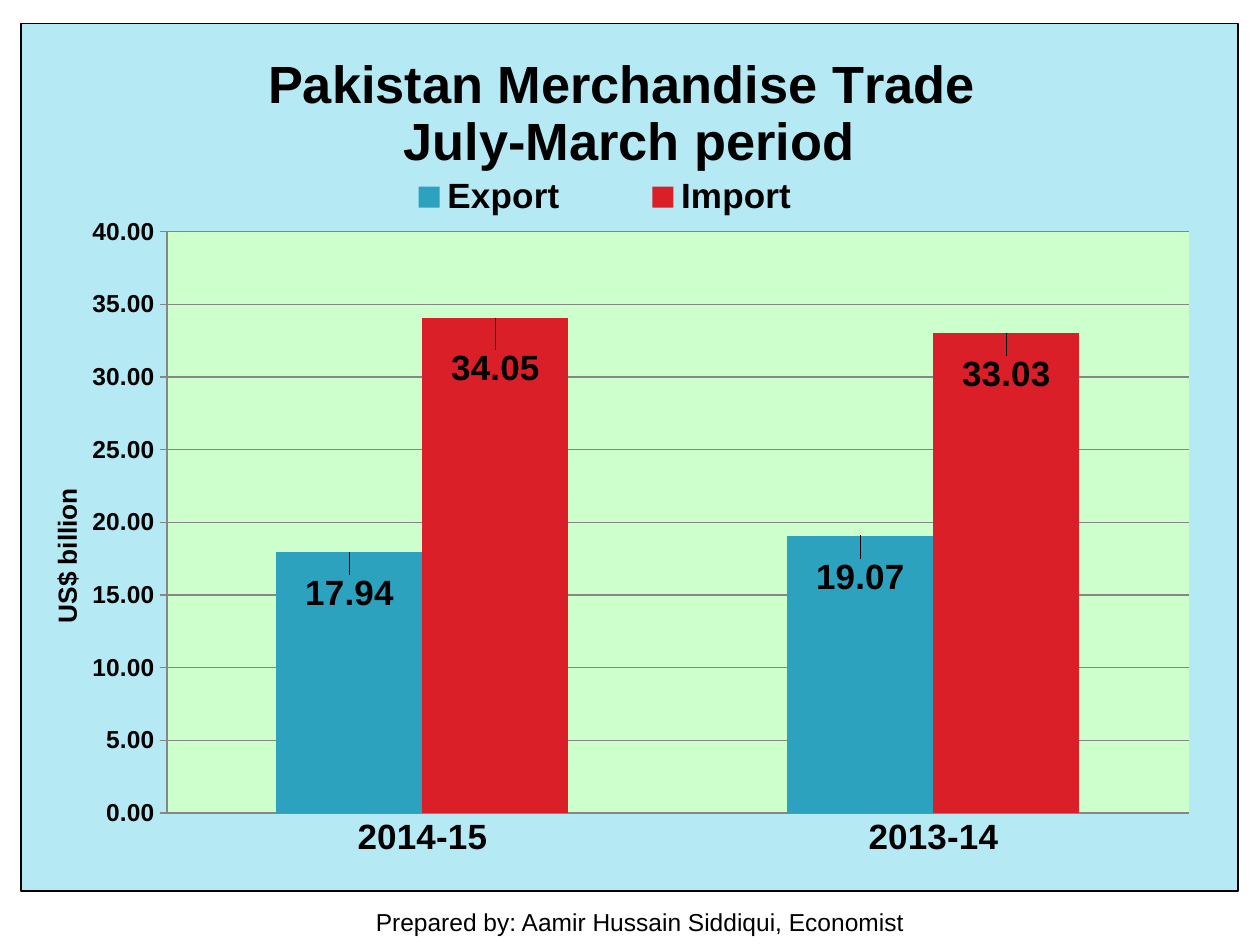
"""Build a slide with a clustered column chart of Pakistan's merchandise trade."""
from lxml import etree
from pptx import Presentation
from pptx.chart.data import CategoryChartData
from pptx.dml.color import RGBColor
from pptx.enum.chart import XL_CHART_TYPE, XL_LABEL_POSITION, XL_LEGEND_POSITION, XL_TICK_MARK
from pptx.enum.text import PP_ALIGN
from pptx.oxml import parse_xml
from pptx.oxml.ns import nsdecls, qn
from pptx.util import Inches, Pt

COLUMNS = XL_CHART_TYPE.COLUMN_CLUSTERED
INSIDE_END = XL_LABEL_POSITION.INSIDE_END
RIGHT = XL_LEGEND_POSITION.RIGHT
NO_TICK, CROSS = XL_TICK_MARK.NONE, XL_TICK_MARK.CROSS
CENTER = PP_ALIGN.CENTER

BLACK = RGBColor(0x00, 0x00, 0x00)
GRAY = RGBColor(0x86, 0x86, 0x86)
SKY = RGBColor(0xB5, 0xE9, 0xF4)
MINT = RGBColor(0xCC, 0xFF, 0xCC)
TEAL = RGBColor(0x2D, 0xA2, 0xBF)
RED = RGBColor(0xDA, 0x1F, 0x28)
FONT = "Arial"

TITLE = "Pakistan Merchandise Trade \nJuly-March period"
AXIS_TITLE = "US$ billion"
CREDIT = "Prepared by: Aamir Hussain Siddiqui, Economist"
YEARS = ["2014-15", "2013-14"]
SERIES = [
    {"name": "Export", "values": (17.94, 19.07), "color": TEAL, "drops": (0.02, 0.02)},
    {"name": "Import", "values": (34.05, 33.03), "color": RED, "drops": (0.03, 0.02)},
]
NO_LEADER_LINES = (
    f'<c:extLst {nsdecls("c")}><c:ext uri="{{CE6537A1-D6FC-4f65-9D91-7224C49458BB}}" '
    'xmlns:c15="http://schemas.microsoft.com/office/drawing/2012/chart">'
    '<c15:showLeaderLines val="0"/></c:ext></c:extLst>'
)


def style_font(font, size, bold=True):
    font.name, font.size, font.bold = FONT, Pt(size), bold
    font.color.rgb = BLACK


def place(element, after=None, target=None, **shares):
    """Give a chart part a manual layout in shares of the chart's size."""
    for old in element.findall(qn("c:layout")):
        element.remove(old)
    layout = etree.Element(qn("c:layout"))
    manual = etree.SubElement(layout, qn("c:manualLayout"))
    if target:
        etree.SubElement(manual, qn("c:layoutTarget")).set("val", target)
    if after != "c:idx":
        for mode in ("xMode", "yMode"):
            etree.SubElement(manual, qn(f"c:{mode}")).set("val", "edge")
    for key, share in shares.items():
        etree.SubElement(manual, qn(f"c:{key}")).set("val", str(share))
    if after:
        element.find(qn(after)).addnext(layout)
    else:
        element.insert(0, layout)


def shape_properties(fill, border=None):
    line = "<a:noFill/>"
    if border:
        line = f'<a:solidFill><a:srgbClr val="{border}"/></a:solidFill>'
    return parse_xml(
        f'<c:spPr {nsdecls("c", "a")}><a:solidFill><a:srgbClr val="{fill}"/>'
        f'</a:solidFill><a:ln w="{Pt(1)}">{line}</a:ln></c:spPr>'
    )


def write_title(owner, text, size, **shares):
    frame = owner.text_frame
    frame.text = text
    for para in frame.paragraphs:
        style_font(para.font, size)
        for span in para.runs:
            style_font(span.font, size)
    place(owner._element, "c:tx", **shares)


def style_axes(chart):
    years, amounts = chart.category_axis, chart.value_axis
    for axis, size, tick in ((years, 20, NO_TICK), (amounts, 14, CROSS)):
        style_font(axis.tick_labels.font, size)
        axis.major_tick_mark, axis.minor_tick_mark = tick, NO_TICK
        axis.format.line.color.rgb = GRAY
    amounts.minimum_scale, amounts.maximum_scale, amounts.major_unit = 0, 40, 5
    amounts.tick_labels.number_format = "#,##0.00"
    amounts.tick_labels.number_format_is_linked = False
    amounts.has_major_gridlines = True
    amounts.major_gridlines.format.line.color.rgb = GRAY
    write_title(amounts.axis_title, AXIS_TITLE, 15, x=0.02, y=0.53)


def hide_leader_lines(labels):
    for old in labels.findall(qn("c:showLeaderLines")):
        labels.remove(old)
    labels.append(parse_xml(NO_LEADER_LINES))


def style_series(plot):
    plot.gap_width, plot.overlap, plot.vary_by_categories = 150, 0, False
    for series, entry in zip(plot.series, SERIES):
        series.format.fill.solid()
        series.format.fill.fore_color.rgb = entry["color"]
        labels = series.data_labels
        labels.show_value = True
        labels.position = INSIDE_END
        style_font(labels.font, 20)
        for index, drop in enumerate(entry["drops"]):
            label = series.points[index].data_label
            style_font(label.font, 20)
            label.position = INSIDE_END
            place(labels._element.findall(qn("c:dLbl"))[index], "c:idx", x=0, y=drop)
        hide_leader_lines(labels._element)


def add_trade_chart(page):
    data = CategoryChartData(number_format="0.00")
    data.categories = YEARS
    for entry in SERIES:
        data.add_series(entry["name"], entry["values"])
    chart = page.shapes.add_chart(
        COLUMNS, Inches(0.16), Inches(0.18), Inches(9.67), Inches(6.9), data
    ).chart
    style_font(chart.font, 10, bold=False)
    chart.has_title = True
    write_title(chart.chart_title, TITLE, 30, x=0.2, y=0.03)
    chart.has_legend = True
    chart.legend.position = RIGHT
    chart.legend.include_in_layout = False
    style_font(chart.legend.font, 20)
    place(chart.legend._element, "c:legendPos", x=0.26, y=0.17, w=0.44, h=0.06)
    style_axes(chart)
    style_series(chart.plots[0])

    space = chart._chartSpace
    body = space.find(qn("c:chart"))
    area = body.find(qn("c:plotArea"))
    place(area, target="inner", x=0.12, y=0.24, w=0.84, h=0.67)
    area.append(shape_properties(MINT))
    body.addnext(shape_properties(SKY, BLACK))


def add_credit(page):
    box = page.shapes.add_textbox(Inches(2.58), Inches(7.15), Inches(5), Inches(0.52))
    box.text_frame.word_wrap = True
    box.text_frame.text = CREDIT
    para = box.text_frame.paragraphs[0]
    para.alignment = CENTER
    style_font(para.runs[0].font, 14, bold=False)


def main():
    deck = Presentation()
    deck.slide_width, deck.slide_height = Inches(10), Inches(7.5)
    page = deck.slides.add_slide(deck.slide_layouts[6])
    add_trade_chart(page)
    add_credit(page)
    deck.save("out.pptx")


if __name__ == "__main__":
    main()
